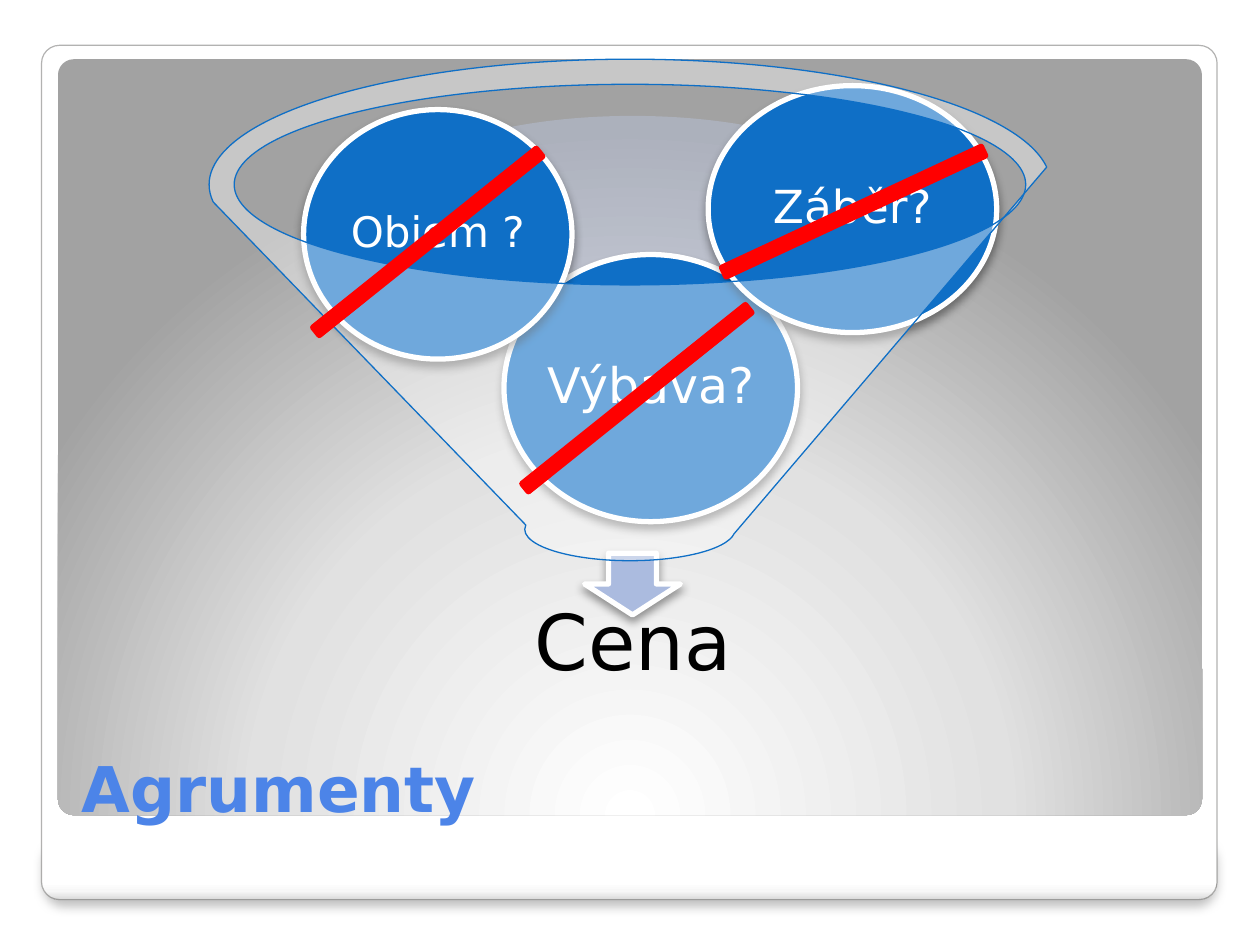
from lxml import etree
from pptx import Presentation
from pptx.dml.color import RGBColor
from pptx.enum.shapes import MSO_SHAPE
from pptx.enum.text import MSO_ANCHOR, PP_ALIGN
from pptx.oxml import parse_xml
from pptx.oxml.ns import qn
from pptx.util import Inches, Pt

ROUND_RECT = MSO_SHAPE.ROUNDED_RECTANGLE
ELLIPSE = MSO_SHAPE.OVAL
DOWN_ARROW = MSO_SHAPE.DOWN_ARROW
FUNNEL = MSO_SHAPE.FUNNEL
PROCESS = MSO_SHAPE.FLOWCHART_PROCESS
CENTER, LEFT = PP_ALIGN.CENTER, PP_ALIGN.LEFT
MIDDLE, BOTTOM = MSO_ANCHOR.MIDDLE, MSO_ANCHOR.BOTTOM

A_NS = "http://schemas.openxmlformats.org/drawingml/2006/main"
FONT = "DejaVu Sans"
COLORS = {
    "white": "FFFFFF", "black": "000000", "title": "4C84E8",
    "frame": "302F2C", "blue": "0F6FC6", "arrow": "ABBBDF",
    "mouth": "BDC8E5", "strike": "FF0000",
}
FRAME_STOPS = [(0, "FFFFFF"), (98, "FFFFFF"), (99, "F7F7F7"), (100, "DADADA")]
PANEL_STOPS = [(0, "FFFFFF"), (55, "E1E1E1"), (100, "A2A2A2")]
DOWNWARD = '<a:lin ang="5400000" scaled="0"/>'
FROM_BOTTOM = ('<a:path path="circle"><a:fillToRect l="100000" t="350000" '
               'r="100000" b="100000"/></a:path>')


def rgb(name):
    return RGBColor.from_string(COLORS[name])


def set_alpha(fill, percent):
    clr = fill._xPr.find(".//" + qn("a:srgbClr"))
    etree.SubElement(clr, qn("a:alpha")).set("val", str(percent * 1000))


def add_shape(slide, kind, box, fill=None, line=None, width=0, alpha=None):
    sp = slide.shapes.add_shape(kind, *(Inches(v) for v in box))
    sp.shadow.inherit = False
    if fill:
        sp.fill.solid()
        sp.fill.fore_color.rgb = rgb(fill)
        if alpha:
            set_alpha(sp.fill, alpha)
    if line:
        sp.line.color.rgb = rgb(line)
        sp.line.width = Pt(width)
    else:
        sp.line.fill.background()
    return sp


def set_gradient(sp, stops, direction):
    sp.fill.gradient()
    old = sp._element.spPr.find(qn("a:gradFill"))
    gs = "".join(f'<a:gs pos="{pos * 1000}"><a:srgbClr val="{color}"/></a:gs>'
                 for pos, color in stops)
    new = parse_xml(f'<a:gradFill xmlns:a="{A_NS}" rotWithShape="1">'
                    f'<a:gsLst>{gs}</a:gsLst>{direction}</a:gradFill>')
    old.getparent().replace(old, new)


def set_shadow(sp, alpha, blur, dist):
    effects = sp._element.spPr.find(qn("a:effectLst"))
    effects.append(parse_xml(
        f'<a:outerShdw xmlns:a="{A_NS}" blurRad="{Pt(blur)}" dist="{Pt(dist)}" '
        f'dir="5400000" algn="ctr" rotWithShape="0">'
        f'<a:srgbClr val="{COLORS["black"]}"><a:alpha val="{alpha * 1000}"/>'
        f'</a:srgbClr></a:outerShdw>'))


def set_text(sp, text, size, color, align=CENTER, anchor=MIDDLE, bold=False):
    tf = sp.text_frame
    tf.word_wrap = True
    tf.vertical_anchor = anchor
    tf.text = text
    p = tf.paragraphs[0]
    p.alignment = align
    font = p.runs[0].font
    font.name, font.size, font.bold = FONT, Pt(size), bold
    font.color.rgb = rgb(color)
    return tf


def set_diagram_text(sp, text, size, color, inset):
    tf = set_text(sp, text, size, color)
    tf.margin_left = tf.margin_right = Inches(inset)
    tf.margin_top = tf.margin_bottom = Inches(inset)
    p = tf.paragraphs[0]
    p.line_spacing = 0.9
    p.space_after = Pt(size * 0.35)


def add_background(slide, box):
    left, top, width, height = box
    # Outer frame, with a shadowed strip along its bottom edge
    strip = (left + 0.02, top + height - 0.51, width - 0.03, 0.5)
    for frame_box, radius in ((strip, 0.333), (box, 0.021)):
        sp = add_shape(slide, ROUND_RECT, frame_box, line="frame", width=0.67)
        sp.adjustments[0] = radius
        set_gradient(sp, FRAME_STOPS, DOWNWARD)
        set_alpha(sp.line.fill, 37)
        if frame_box is strip:
            set_shadow(sp, 25, 6, 4)
    # Inner grey panel
    panel = add_shape(slide, ROUND_RECT,
                      (left + 0.13, top + 0.11, width - 0.25, 6))
    panel.adjustments[0] = 0.021
    set_gradient(panel, PANEL_STOPS, FROM_BOTTOM)


def add_title(slide, text, box):
    title = slide.shapes.title
    title.left, title.top, title.width, title.height = map(Inches, box)
    set_text(title, text, 36, "title", LEFT, BOTTOM, True)
    # Bring the title in front of the background panels
    slide.shapes._spTree.append(title._element)


def add_funnel(slide, box, balls, result):
    left, top, width, height = box
    # Mouth and outlet arrow
    add_shape(slide, ELLIPSE, (left + 1.39, top + 0.45, 3.94, 1.37),
              "mouth", alpha=40)
    arrow = add_shape(slide, DOWN_ARROW,
                      (left + 2.98, top + height - 0.06, 0.76, 0.49),
                      "arrow", "white", 3)
    set_shadow(arrow, 40, 5.2, 3)
    # Result below the funnel
    tb = slide.shapes.add_textbox(Inches(left + 1.53), Inches(top + height + 0.21),
                                  Inches(3.67), Inches(0.92))
    set_diagram_text(tb, result, 44, "black", 0.34)
    # Arguments inside the funnel
    for text, size, ball_box in balls:
        sp = add_shape(slide, ELLIPSE, ball_box, "blue", "white", 3)
        set_shadow(sp, 40, 5.2, 3)
        set_diagram_text(sp, text, size, "white", 0)
    # Translucent cone over the balls
    add_shape(slide, FUNNEL, box, "white", "blue", 0.75, 40)


def add_strikes(slide, strikes):
    for left, top, angle in strikes:
        sp = add_shape(slide, PROCESS, (left, top, 2.27, 0.08),
                       "strike", "strike", 3.35)
        sp.rotation = angle


def main():
    prs = Presentation()
    prs.slide_width, prs.slide_height = Inches(10), Inches(7.5)
    slide = prs.slides.add_slide(prs.slide_layouts[5])
    add_background(slide, (0.33, 0.36, 9.33, 6.78))
    add_title(slide, "Agrumenty", (0.55, 5.45, 8.95, 1.15))
    balls = [
        ("Výbava?", 28, (4, 2.02, 2.33, 2.12)),
        ("Objem ?", 24, (2.41, 0.87, 2.13, 1.98)),
        ("Záběr?", 26, (5.62, 0.68, 2.29, 1.96)),
    ]
    add_funnel(slide, (1.66, 0.47, 6.68, 3.98), balls, "Cena")
    add_strikes(slide, [(2.26, 1.88, 321.3), (5.64, 1.64, 335),
                        (3.92, 3.12, 321.3)])
    prs.save("out.pptx")


if __name__ == "__main__":
    main()
